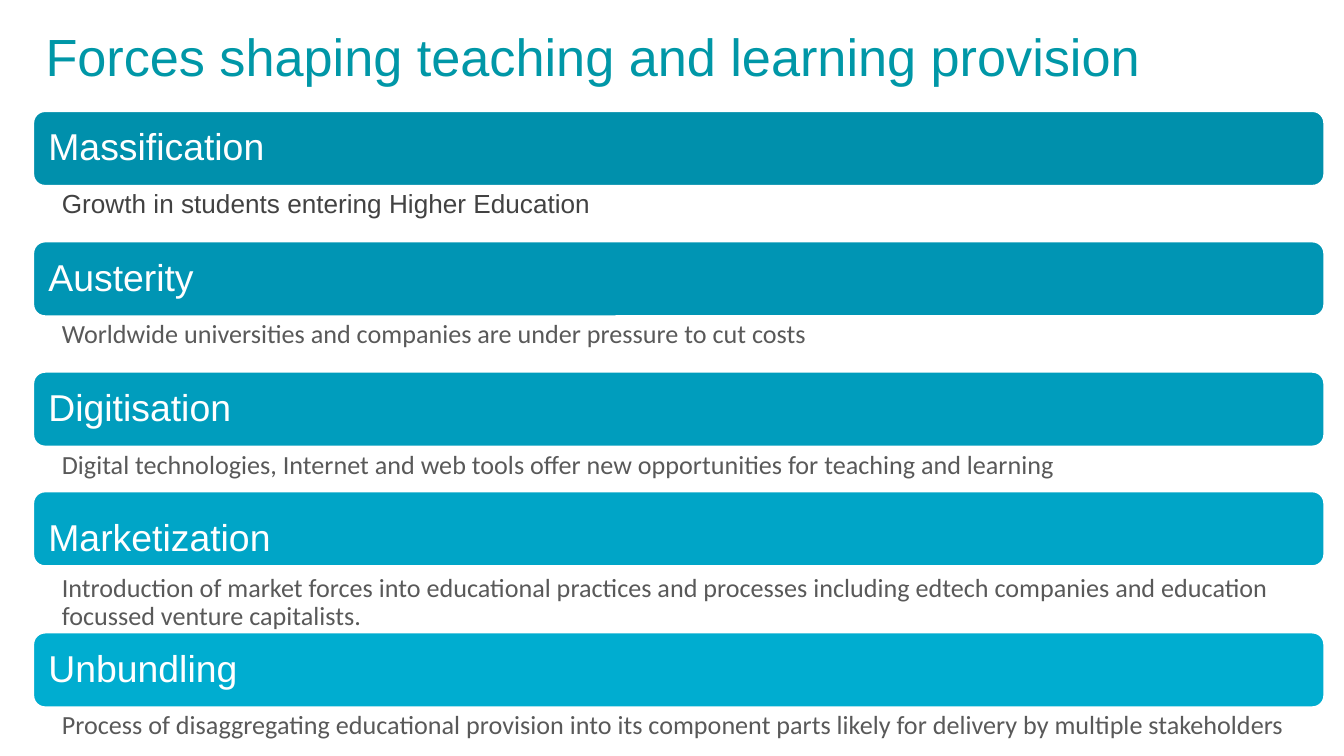
from dataclasses import dataclass

from pptx import Presentation
from pptx import util as u
from pptx.dml.color import RGBColor
from pptx.enum import shapes, text

TEAL = RGBColor(0x00, 0x97, 0xA7)
WHITE = RGBColor(0xFF, 0xFF, 0xFF)
CHARCOAL = RGBColor(0x42, 0x42, 0x42)
GREY = RGBColor(0x59, 0x59, 0x59)

LEFT, WIDTH = 0.24, 9.62
FIRST_TOP, PITCH = 0.82, 0.97
BAR_HEIGHT, LABEL_INSET = 0.57, 0.03


@dataclass(frozen=True)
class Style:
    font: str
    size: int
    color: RGBColor
    margins: tuple[float, float, float, float]
    anchor: text.MSO_ANCHOR = text.MSO_ANCHOR.TOP
    line_spacing: float = 0.9


@dataclass(frozen=True)
class Force:
    name: str
    detail: str
    fill: RGBColor
    detail_style: Style
    bar_shift: float = 0
    detail_shift: float = 0


DETAIL_MARGINS = (0.22, 0.03, 0.16, 0.03)
TITLE = Style("Arial", 28, TEAL, (0.1,) * 4, line_spacing=1.0)
LABEL = Style("Arial", 20, WHITE, (0.08,) * 4, text.MSO_ANCHOR.MIDDLE)
ARIAL_DETAIL = Style("Arial", 14, CHARCOAL, DETAIL_MARGINS)
CALIBRI_DETAIL = Style("Calibri", 14, GREY, DETAIL_MARGINS)

FORCES = [
    Force("Massification", "Growth in students entering Higher Education",
          RGBColor(0x00, 0x90, 0xAC), ARIAL_DETAIL),
    Force("Austerity",
          "Worldwide universities and companies are under pressure to cut costs",
          RGBColor(0x00, 0x95, 0xB4), CALIBRI_DETAIL),
    Force("Digitisation",
          "Digital technologies, Internet and web tools offer new opportunities "
          "for teaching and learning",
          RGBColor(0x00, 0x9D, 0xBD), CALIBRI_DETAIL),
    Force("Marketization",
          "Introduction of market forces into educational practices and processes "
          "including edtech companies and education focussed venture capitalists.",
          RGBColor(0x00, 0xA5, 0xC7), CALIBRI_DETAIL,
          bar_shift=-0.08, detail_shift=-0.05),
    Force("Unbundling",
          "Process of disaggregating educational provision into its component parts "
          "likely for delivery by multiple stakeholders",
          RGBColor(0x00, 0xAD, 0xD0), CALIBRI_DETAIL),
]


def add_text(page, words: str, left: float, top: float, width: float,
             height: float, style: Style) -> None:
    box = page.shapes.add_textbox(
        u.Inches(left), u.Inches(top), u.Inches(width), u.Inches(height))
    frame = box.text_frame
    frame.word_wrap = True
    frame.vertical_anchor = style.anchor
    (frame.margin_left, frame.margin_top,
     frame.margin_right, frame.margin_bottom) = map(u.Inches, style.margins)
    para = frame.paragraphs[0]
    para.line_spacing = style.line_spacing
    span = para.add_run()
    span.text = words
    span.font.name = style.font
    span.font.size = u.Pt(style.size)
    span.font.color.rgb = style.color


def add_bar(page, top: float, fill: RGBColor) -> None:
    bar = page.shapes.add_shape(
        shapes.MSO_SHAPE.ROUNDED_RECTANGLE,
        u.Inches(LEFT), u.Inches(top), u.Inches(WIDTH), u.Inches(BAR_HEIGHT))
    bar.shadow.inherit = False
    bar.fill.solid()
    bar.fill.fore_color.rgb = fill
    bar.line.color.rgb = WHITE
    bar.line.width = u.Pt(2)


def add_force(page, force: Force, top: float) -> None:
    add_bar(page, top + force.bar_shift, force.fill)
    add_text(page, force.name, LEFT + 0.04, top + LABEL_INSET, 9.55,
             BAR_HEIGHT - 2 * LABEL_INSET, LABEL)
    add_text(page, force.detail, LEFT, top + BAR_HEIGHT + force.detail_shift,
             WIDTH, 0.4, force.detail_style)


def main() -> None:
    deck = Presentation()
    deck.slide_width = u.Inches(10)
    deck.slide_height = u.Inches(10 * 9 / 16)
    page = deck.slides.add_slide(deck.slide_layouts[6])
    add_text(page, "Forces shaping teaching and learning provision",
             LEFT, 0.08, 9.32, 0.63, TITLE)
    for row, force in enumerate(FORCES):
        add_force(page, force, FIRST_TOP + row * PITCH)
    deck.save("out.pptx")


if __name__ == "__main__":
    main()
